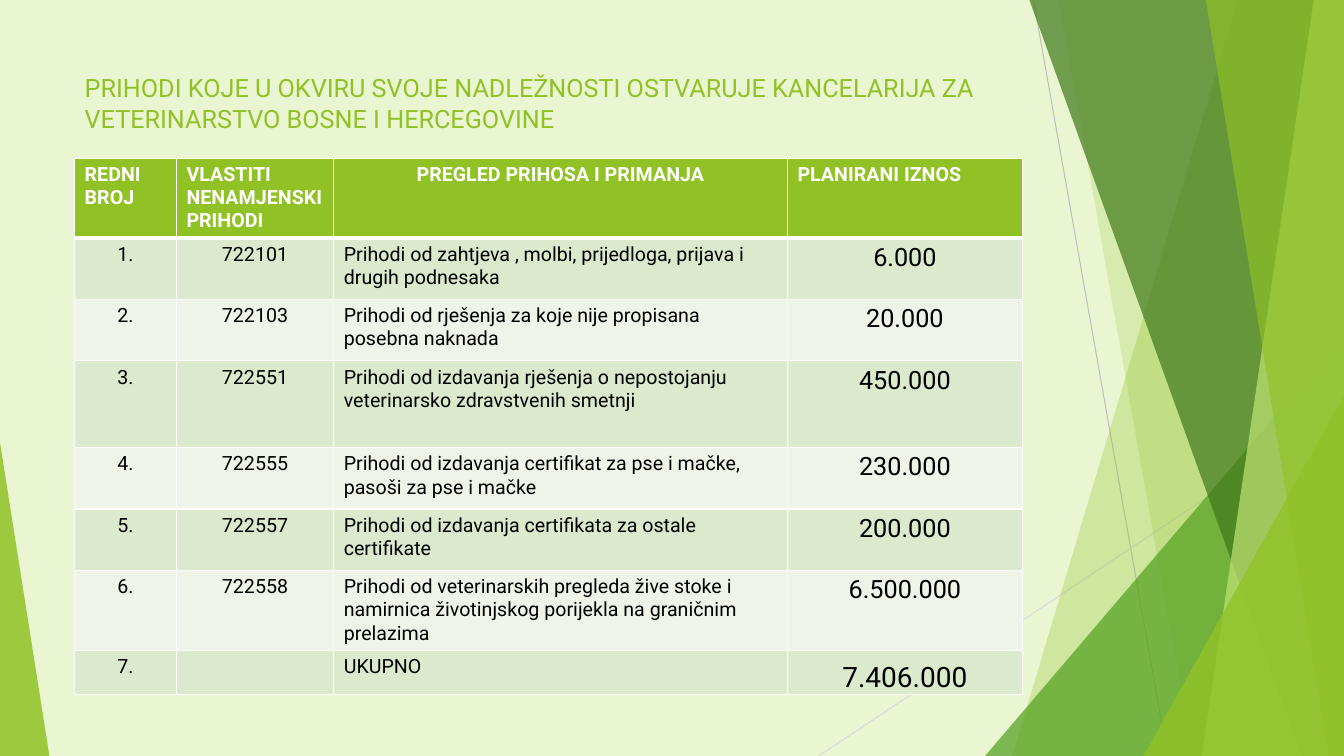
from dataclasses import dataclass

from lxml import etree
from pptx import Presentation
from pptx import util as u
from pptx.dml.color import RGBColor
from pptx.enum import shapes, text
from pptx.oxml import ns

FONT = "Roboto"
COLORS = {
    "background": "EAF6D1", "lime": "90C226", "green": "54A021",
    "forest": "3F7819", "pale": "C0E474", "gray": "BFBFBF",
    "light_gray": "D9D9D9", "white": "FFFFFF", "black": "000000",
    "band_dark": "DBE9CD", "band_light": "EEF4E8",
}
SLIDE_WIDTH, SLIDE_HEIGHT = 13.33, 7.5
CENTER, LEFT = text.PP_ALIGN.CENTER, text.PP_ALIGN.LEFT


@dataclass
class Ray:
    start: tuple[float, float]
    end: tuple[float, float]
    color: str


@dataclass
class Facet:
    """A band reaching the right slide edge, slanted on its left side."""
    top_x: float
    bottom_x: float
    color: str
    opacity: int


@dataclass
class Triangle:
    left: float
    top: float
    width: float
    apex: float
    color: str
    opacity: int


@dataclass
class Income:
    code: str
    description: str
    amount: str
    height: float = 0.61


RAYS = [
    Ray((10.25, 0), (11.58, 7.5), "gray"),
    Ray((13.33, 4.03), (8.12, 7.5), "light_gray"),
]
DECORATIONS = [
    Facet(12.28, 10.04, "lime", 30),
    Facet(10.5, 11.83, "lime", 20),
    Triangle(9.77, 3.33, 3.56, 1, "green", 72),
    Facet(10.21, 12.91, "forest", 70),
    Facet(13.03, 11.92, "pale", 70),
    Facet(11.96, 13.18, "lime", 65),
    Triangle(11.34, 3.93, 1.99, 1, "lime", 80),
    Triangle(0, 4.39, 0.49, 0, "lime", 85),
]
TITLE = ("PRIHODI KOJE U OKVIRU SVOJE NADLEŽNOSTI OSTVARUJE KANCELARIJA ZA "
         "VETERINARSTVO BOSNE I HERCEGOVINE")
HEADERS = ["REDNI BROJ", "VLASTITI NENAMJENSKI PRIHODI",
           "PREGLED PRIHOSA I PRIMANJA", "PLANIRANI IZNOS"]
HEADER_HEIGHT = 0.75
COLUMN_WIDTHS = [1.01, 1.56, 4.5, 2.33]
INCOMES = [
    Income("722101", "Prihodi od zahtjeva , molbi, prijedloga, prijava i drugih podnesaka", "6.000"),
    Income("722103", "Prihodi od rješenja za koje nije propisana posebna naknada", "20.000"),
    Income("722551", "Prihodi od izdavanja rješenja o nepostojanju veterinarsko zdravstvenih smetnji",
           "450.000", 0.86),
    Income("722555", "Prihodi od izdavanja certifikat za pse i mačke, pasoši za pse i mačke", "230.000"),
    Income("722557", "Prihodi od izdavanja certifikata za ostale certifikate", "200.000"),
    Income("722558", "Prihodi od veterinarskih pregleda žive stoke i namirnica životinjskog "
           "porijekla na graničnim prelazima", "6.500.000"),
    Income("", "UKUPNO", "7.406.000", 0.44),
]


def rgb(name: str) -> RGBColor:
    return RGBColor.from_string(COLORS[name])


def draw_ray(slide, ray: Ray) -> None:
    points = [u.Inches(value) for value in (*ray.start, *ray.end)]
    connector = slide.shapes.add_connector(shapes.MSO_CONNECTOR.STRAIGHT, *points)
    connector.line.color.rgb = rgb(ray.color)
    connector.line.width = u.Pt(0.75)
    etree.SubElement(connector.element.spPr, ns.qn("a:effectLst"))


def draw_decoration(slide, item: Facet | Triangle) -> None:
    if isinstance(item, Facet):
        corners = [(SLIDE_WIDTH, 0), (SLIDE_WIDTH, SLIDE_HEIGHT), (item.bottom_x, SLIDE_HEIGHT)]
        builder = slide.shapes.build_freeform(u.Inches(item.top_x), 0)
        builder.add_line_segments([(u.Inches(x), u.Inches(y)) for x, y in corners], close=True)
        shape = builder.convert_to_shape()
    else:
        box = (item.left, item.top, item.width, SLIDE_HEIGHT - item.top)
        shape = slide.shapes.add_shape(shapes.MSO_SHAPE.ISOSCELES_TRIANGLE,
                                       *[u.Inches(value) for value in box])
        shape.adjustments[0] = item.apex
    shape.shadow.inherit = False
    shape.line.fill.background()
    shape.fill.solid()
    shape.fill.fore_color.rgb = rgb(item.color)
    color = shape.element.spPr.find(f".//{ns.qn('a:srgbClr')}")
    etree.SubElement(color, ns.qn("a:alpha"), val=str(item.opacity * 1000))


def format_text(paragraph, size: float, color: str, bold: bool, alignment) -> None:
    paragraph.alignment = alignment
    for run in paragraph.runs:
        run.font.name = FONT
        run.font.size = u.Pt(size)
        run.font.bold = bold
        run.font.color.rgb = rgb(color)


def place_title(slide) -> None:
    title = slide.shapes.title
    title.left, title.top = u.Inches(0.74), u.Inches(0.67)
    title.width, title.height = u.Inches(9.4), u.Inches(1.44)
    frame = title.text_frame
    frame.text = TITLE
    frame.word_wrap = True
    frame.auto_size = text.MSO_AUTO_SIZE.NONE
    frame.vertical_anchor = text.MSO_ANCHOR.TOP
    format_text(frame.paragraphs[0], 18, "lime", False, LEFT)
    frame.paragraphs[0].line_spacing = 1.0
    title.element.getparent().append(title.element)  # in front of the decorations


def add_borders(cell, top: float, bottom: float) -> None:
    properties = cell._tc.get_or_add_tcPr()
    for side, width in (("L", 1), ("R", 1), ("T", top), ("B", bottom)):
        line = etree.SubElement(properties, ns.qn(f"a:ln{side}"), w=str(u.Pt(width)))
        fill = etree.SubElement(line, ns.qn("a:solidFill"))
        etree.SubElement(fill, ns.qn("a:srgbClr"), val=COLORS["white"])


def draw_table(slide) -> None:
    heights = [HEADER_HEIGHT] + [income.height for income in INCOMES]
    rows = [HEADERS] + [[f"{number}.", income.code, income.description, income.amount]
                        for number, income in enumerate(INCOMES, 1)]
    table = slide.shapes.add_table(len(rows), len(HEADERS), u.Inches(0.74), u.Inches(1.57),
                                   u.Inches(sum(COLUMN_WIDTHS)), u.Inches(sum(heights))).table
    for column, width in zip(table.columns, COLUMN_WIDTHS):
        column.width = u.Inches(width)
    for row_index, values in enumerate(rows):
        table.rows[row_index].height = u.Inches(heights[row_index])
        header = row_index == 0
        fill = "lime" if header else "band_dark" if row_index % 2 else "band_light"
        for column_index, value in enumerate(values):
            cell = table.cell(row_index, column_index)
            cell.text_frame.text = value
            add_borders(cell, 3 if row_index == 1 else 1, 3 if header else 1)
            cell.fill.solid()
            cell.fill.fore_color.rgb = rgb(fill)
            centered = header == (column_index == 2)
            size = 18 if column_index == 3 and not header else 14
            format_text(cell.text_frame.paragraphs[0], size, "white" if header else "black",
                        header, CENTER if centered else LEFT)
    total = table.cell(len(rows) - 1, 3)
    total.vertical_anchor = text.MSO_ANCHOR.BOTTOM
    total.margin_left = total.margin_right = total.margin_top = u.Inches(0.01)
    total.margin_bottom = 0
    total.text_frame.paragraphs[0].runs[0].font.size = u.Pt(20)


def main() -> None:
    presentation = Presentation()
    presentation.slide_width = u.Inches(SLIDE_WIDTH)
    presentation.slide_height = u.Inches(SLIDE_HEIGHT)
    slide = presentation.slides.add_slide(presentation.slide_layouts[5])
    slide.background.fill.solid()
    slide.background.fill.fore_color.rgb = rgb("background")
    for ray in RAYS:
        draw_ray(slide, ray)
    for item in DECORATIONS:
        draw_decoration(slide, item)
    place_title(slide)
    draw_table(slide)
    presentation.save("out.pptx")


if __name__ == "__main__":
    main()
